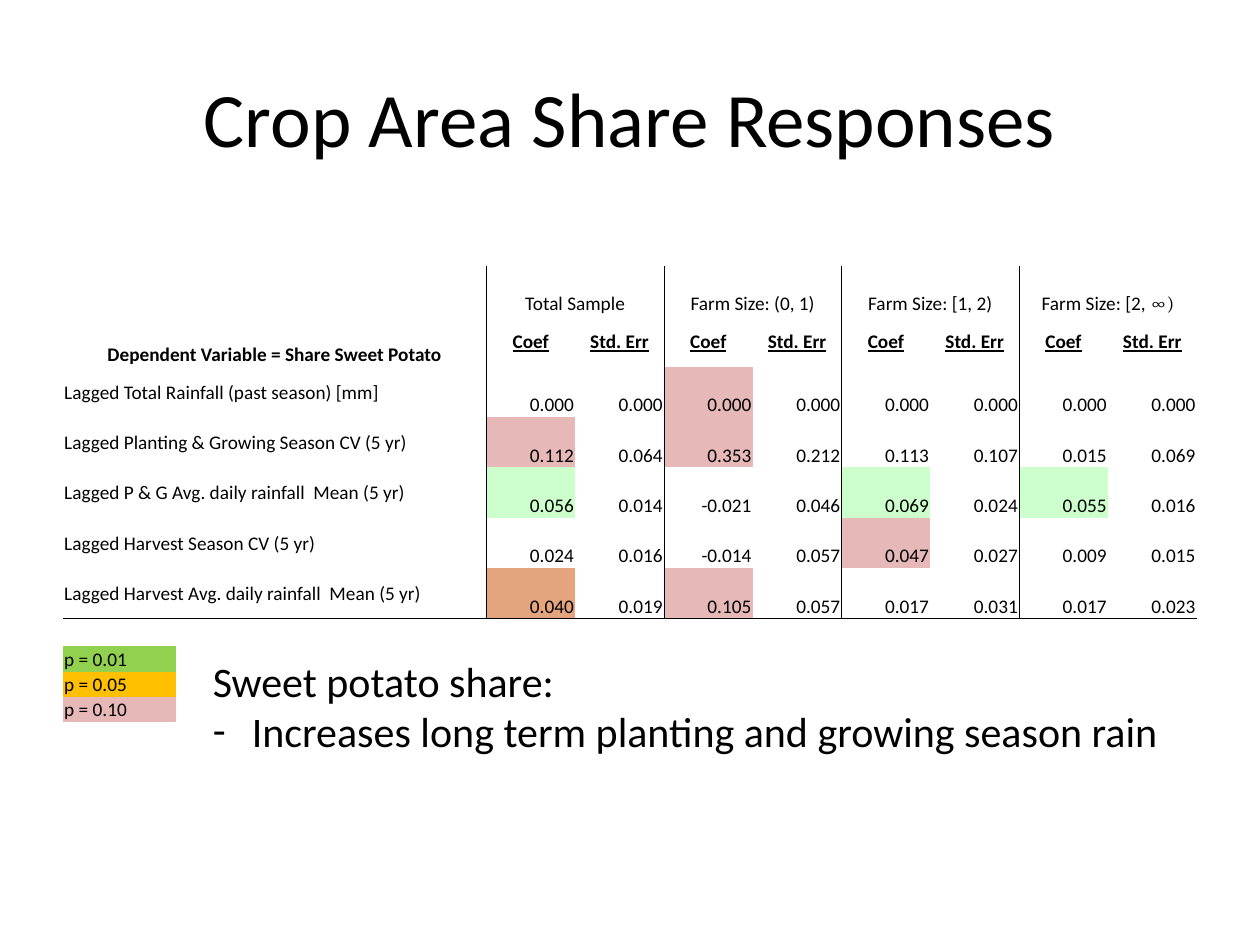
"""Build the slide on crop area share responses for sweet potato."""
from lxml import etree
from pptx import Presentation
from pptx import util as u
from pptx.dml.color import RGBColor
from pptx.enum import text
from pptx.oxml import ns

BLACK = RGBColor(0, 0, 0)
LIME = RGBColor(0x92, 0xD0, 0x50)
GOLD = RGBColor(0xFF, 0xC0, 0x00)
PINK = RGBColor(0xE6, 0xB8, 0xB7)
MINT = RGBColor(0xCC, 0xFF, 0xCC)
RUST = RGBColor(0xE4, 0xA5, 0x7E)
LEFT, MID, RIGHT = text.PP_ALIGN.LEFT, text.PP_ALIGN.CENTER, text.PP_ALIGN.RIGHT
BASE, HALF = text.MSO_ANCHOR.BOTTOM, text.MSO_ANCHOR.MIDDLE


def put(para, words, size, **more):
    run = para.add_run()
    run.text = words
    look = {"name": "Calibri", "size": u.Pt(size), **more}
    for key, val in look.items():
        setattr(run.font, key, val)
    run.font.color.rgb = BLACK


def dress(cell, tint, align, anchor, edges):
    form = {"margin_left": u.Inches(0.01), "margin_right": u.Inches(0.01),
            "margin_top": u.Inches(0.01), "margin_bottom": 0,
            "vertical_anchor": anchor}
    for key, val in form.items():
        setattr(cell, key, val)
    props = cell._tc.get_or_add_tcPr()
    for side in "LRTB":
        width = edges.get(side, 0)
        line = etree.SubElement(props, ns.qn("a:ln" + side), w=str(u.Pt(width)))
        if width:
            fill = etree.SubElement(line, ns.qn("a:solidFill"))
            etree.SubElement(fill, ns.qn("a:srgbClr"), val=str(BLACK))
        else:
            etree.SubElement(line, ns.qn("a:noFill"))
    if tint:
        cell.fill.solid()
        cell.fill.fore_color.rgb = tint
    else:
        cell.fill.background()
    para = cell.text_frame.paragraphs[0]
    para.alignment = align
    return para


deck = Presentation()
deck.slide_width, deck.slide_height = u.Inches(10), u.Inches(7.5)
wide, high = deck.slide_width, deck.slide_height
slide = deck.slides.add_slide(deck.slide_layouts[5])
edge, span = int(wide * 0.05), int(wide * 0.9)

title = slide.shapes.title
spot = {"left": edge, "top": int(high * 0.04), "width": span, "height": int(high / 6)}
for key, val in spot.items():
    setattr(title, key, val)
title.text_frame.vertical_anchor = HALF
head = title.text_frame.paragraphs[0]
head.alignment = MID
put(head, "Crop Area Share Responses", 44)

keys = [("p = 0.01", LIME), ("p = 0.05", GOLD), ("p = 0.10", PINK)]
step = u.Inches(0.2)
legend = slide.shapes.add_table(len(keys), 1, edge, u.Inches(5.13),
                                int(wide * 0.09), step * len(keys)).table
legend.first_row = legend.horz_banding = False
for row, (words, tint) in enumerate(keys):
    put(dress(legend.cell(row, 0), tint, LEFT, BASE, {}), words, 11)

groups = ["Total Sample", "Farm Size: (0, 1)", "Farm Size: [1, 2)", "Farm Size: [2, "]
data = [
    ("Lagged Total Rainfall (past season) [mm]",
     "0.000 0.000 0.000 0.000 0.000 0.000 0.000 0.000"),
    ("Lagged Planting & Growing Season CV (5 yr)",
     "0.112 0.064 0.353 0.212 0.113 0.107 0.015 0.069"),
    ("Lagged P & G Avg. daily rainfall  Mean (5 yr)",
     "0.056 0.014 -0.021 0.046 0.069 0.024 0.055 0.016"),
    ("Lagged Harvest Season CV (5 yr)",
     "0.024 0.016 -0.014 0.057 0.047 0.027 0.009 0.015"),
    ("Lagged Harvest Avg. daily rainfall  Mean (5 yr)",
     "0.040 0.019 0.105 0.057 0.017 0.031 0.017 0.023"),
]
tints = {(2, 3): PINK, (3, 1): PINK, (3, 3): PINK, (4, 1): MINT, (4, 5): MINT,
         (4, 7): MINT, (5, 5): PINK, (6, 1): RUST, (6, 3): PINK}
rows = [["Dependent Variable = Share Sweet Potato"], [""] + ["Coef", "Std. Err"] * 4]
for name in groups:
    rows[0] += [name, ""]
rows += [[name] + nums.split() for name, nums in data]

step = u.Inches(0.4)
grid = slide.shapes.add_table(len(rows), 9, edge, u.Inches(2.11),
                              span, step * len(rows)).table
grid.first_row = grid.horz_banding = False
stub = u.Inches(3.36)
for col, part in enumerate(grid.columns):
    part.width = (span - stub) // 8 if col else stub
grid.cell(0, 0).merge(grid.cell(1, 0))
for col in range(1, 9, 2):
    grid.cell(0, col).merge(grid.cell(0, col + 1))

for row, line in enumerate(rows):
    for col, words in enumerate(line):
        edges = {}
        if col % 2:
            edges["L"] = 0.5
        if col < 7 and (row == 0 or col % 2 == 0):
            edges["R"] = 0.5
        if row == len(rows) - 1:
            edges["B"] = 1
        align = MID if row < 2 else RIGHT if col else LEFT
        anchor = HALF if row == 1 or (row > 1 and col == 0) else BASE
        para = dress(grid.cell(row, col), tints.get((row, col)), align, anchor, edges)
        if words:
            put(para, words, 11, bold=row == 1 or row + col == 0, underline=row == 1)
put(grid.cell(0, 7).text_frame.paragraphs[0], "∞)", 11, name="Cambria")

box = slide.shapes.add_textbox(u.Inches(1.59), u.Inches(5.15),
                               u.Inches(7.78), u.Inches(0.91))
frame = box.text_frame
frame.word_wrap = False
frame.auto_size = text.MSO_AUTO_SIZE.SHAPE_TO_FIT_TEXT
put(frame.paragraphs[0], "Sweet potato share:", 24)
item = frame.add_paragraph()
props = item._p.get_or_add_pPr()
dent = u.Inches(0.31)
props.set("marL", str(dent))
props.set("indent", str(-dent))
etree.SubElement(props, ns.qn("a:buFont"), typeface="Calibri")
etree.SubElement(props, ns.qn("a:buChar"), char="-")
put(item, "Increases long term planting and growing season rain", 24)

deck.save("out.pptx")
